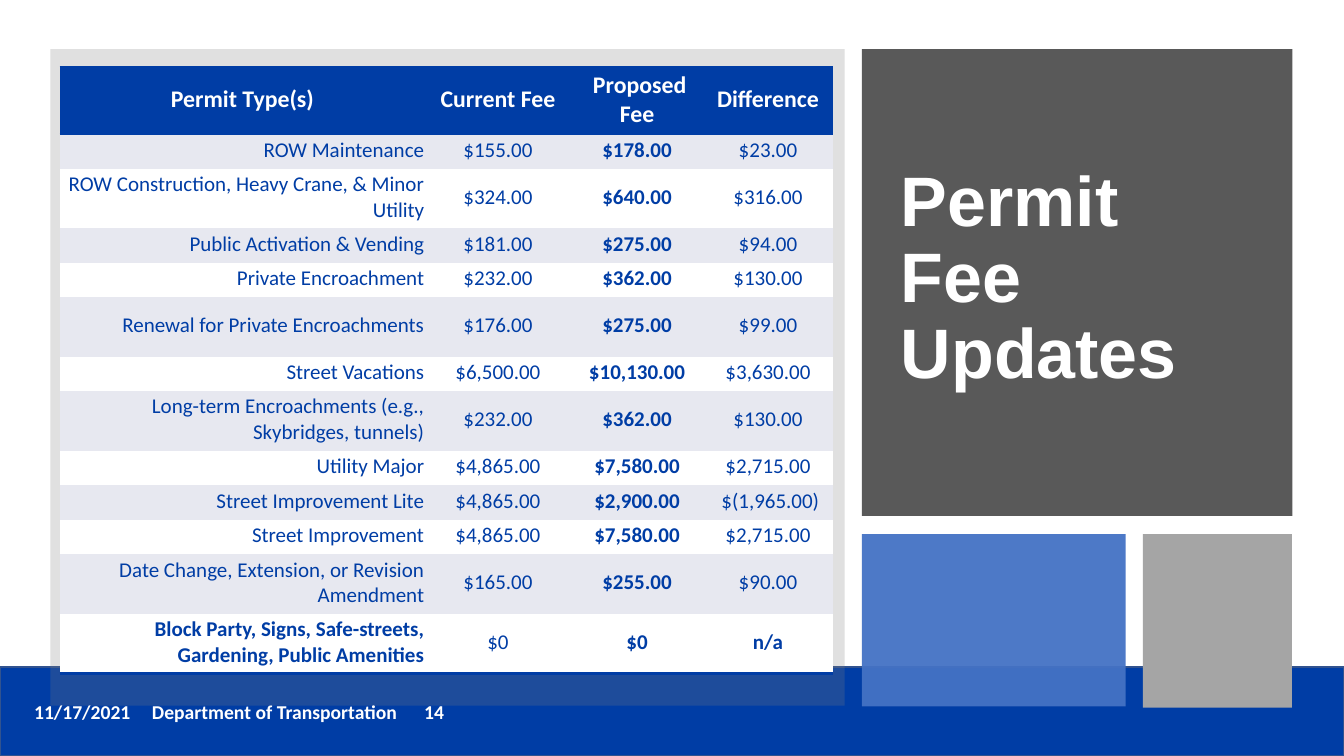
from dataclasses import dataclass

from lxml import etree
from pptx import Presentation
from pptx import util as u
from pptx.dml import color
from pptx.enum import shapes, text
from pptx.oxml import ns


@dataclass(frozen=True)
class Theme:
    blue: str = "003DA5"
    band_line: str = "31538F"
    white: str = "FFFFFF"
    stripe: str = "E7E8F0"
    panel: str = "7F7F7F"
    charcoal: str = "595959"
    accent: str = "4472C4"
    grey: str = "A5A5A5"
    body_font: str = "Calibri"
    title_font: str = "Arial"
    title_size: int = 50
    header_size: int = 17
    body_size: int = 15
    footer_size: int = 14


@dataclass(frozen=True)
class Box:
    left: float
    top: float
    width: float
    height: float

    def lengths(self) -> list[u.Cm]:
        return [u.Cm(n) for n in (self.left, self.top, self.width, self.height)]


@dataclass(frozen=True)
class Block:
    box: Box
    fill: str
    opacity: int = 100
    line: str = ""


@dataclass(frozen=True)
class Permit:
    label: str
    current: str
    proposed: str
    difference: str
    tall: bool = False


THEME = Theme()
NBSP = chr(160)
NO_GRID_STYLE = "{2D5ABB26-0587-4C30-8999-92F81FD0307C}"

BLOCKS = [
    Block(Box(0, 16.81, 33.87, 2.24), THEME.blue, line=THEME.band_line),
    Block(Box(1.27, 1.24, 20.02, 16.54), THEME.panel, opacity=24),
    Block(Box(21.72, 1.24, 10.85, 11.76), THEME.charcoal),
    Block(Box(21.72, 13.46, 6.65, 4.34), THEME.accent, opacity=95),
    Block(Box(28.8, 13.46, 3.76, 4.37), THEME.grey),
]
TITLE_BOX = Box(22.45, 3.1, 9.35, 7.9)
FOOTER_BOX = Box(0.61, 17.5, 25.55, 0.86)
FOOTER_TABS = [2.97, 9.83]

TABLE_LEFT, TABLE_TOP = 1.5, 1.7
COLUMN_WIDTHS = [9.22, 3.66, 3.35, 3.25]
HEADER_HEIGHT, ROW_HEIGHT, TALL_HEIGHT = 1.68, 0.87, 1.5
HEADERS = ["Permit Type(s)", "Current Fee", NBSP + "Proposed Fee", "Difference"]
PERMITS = [
    Permit("ROW Maintenance", "$155.00", "$178.00", "$23.00"),
    Permit("ROW Construction, Heavy Crane, & Minor Utility",
           "$324.00", "$640.00", "$316.00", tall=True),
    Permit("Public Activation & Vending", "$181.00", "$275.00", "$94.00"),
    Permit("Private Encroachment", "$232.00", "$362.00", "$130.00"),
    Permit("Renewal for Private Encroachments",
           "$176.00", "$275.00", "$99.00", tall=True),
    Permit("Street Vacations", "$6,500.00", "$10,130.00", "$3,630.00"),
    Permit("Long-term Encroachments (e.g., Skybridges, tunnels)",
           "$232.00", "$362.00", "$130.00", tall=True),
    Permit("Utility Major", "$4,865.00", "$7,580.00", "$2,715.00"),
    Permit("Street Improvement Lite", "$4,865.00", "$2,900.00", "$(1,965.00)"),
    Permit("Street Improvement", "$4,865.00", "$7,580.00", "$2,715.00"),
    Permit("Date Change, Extension, or Revision Amendment",
           "$165.00", "$255.00", "$90.00", tall=True),
    Permit("Block Party, Signs, Safe-streets, Gardening, Public Amenities",
           "$0", "$0", "n/a", tall=True),
]


def rgb(value: str) -> color.RGBColor:
    return color.RGBColor.from_string(value)


def set_font(paragraph, name: str, size: int, ink: str, bold: bool) -> None:
    font = paragraph.font
    font.name, font.size, font.bold = name, u.Pt(size), bold
    font.color.rgb = rgb(ink)


def add_block(slide, block: Block) -> None:
    shape = slide.shapes.add_shape(shapes.MSO_SHAPE.RECTANGLE, *block.box.lengths())
    shape.shadow.inherit = False
    shape.fill.solid()
    shape.fill.fore_color.rgb = rgb(block.fill)
    if block.opacity < 100:
        fill_color = shape.fill._xPr.find(".//" + ns.qn("a:srgbClr"))
        etree.SubElement(fill_color, ns.qn("a:alpha"), val=str(block.opacity * 1000))
    if block.line:
        shape.line.color.rgb = rgb(block.line)
        shape.line.width = u.Pt(1)
    else:
        shape.line.fill.background()


def add_text(slide, box: Box, words: str):
    frame = slide.shapes.add_textbox(*box.lengths()).text_frame
    frame.word_wrap = True
    frame.text = words
    return frame


def add_title(slide) -> None:
    frame = add_text(slide, TITLE_BOX, "Permit Fee Updates")
    frame.vertical_anchor = text.MSO_ANCHOR.MIDDLE
    paragraph = frame.paragraphs[0]
    paragraph.line_spacing = 0.9
    set_font(paragraph, THEME.title_font, THEME.title_size, THEME.white, True)


def add_footer(slide) -> None:
    frame = add_text(slide, FOOTER_BOX, "11/17/2021\tDepartment of Transportation\t14")
    frame.auto_size = text.MSO_AUTO_SIZE.SHAPE_TO_FIT_TEXT
    paragraph = frame.paragraphs[0]
    tabs = etree.SubElement(paragraph._p.get_or_add_pPr(), ns.qn("a:tabLst"))
    for stop in FOOTER_TABS:
        etree.SubElement(tabs, ns.qn("a:tab"), pos=str(u.Cm(stop)), algn="l")
    set_font(paragraph, THEME.body_font, THEME.footer_size, THEME.white, True)


def add_border(cell, tag: str) -> None:
    border = etree.Element(ns.qn(tag), w=str(u.Pt(2)))
    fill = etree.SubElement(border, ns.qn("a:solidFill"))
    etree.SubElement(fill, ns.qn("a:srgbClr"), val=THEME.blue)
    cell._tc.get_or_add_tcPr().insert(0, border)


def fill_cell(cell, words: str, fill: str, ink: str, size: int, bold: bool,
              align: text.PP_ALIGN) -> None:
    cell.text = words
    cell.vertical_anchor = text.MSO_ANCHOR.MIDDLE
    cell.margin_left = cell.margin_top = cell.margin_right = u.Cm(0.03)
    cell.margin_bottom = u.Cm(0.1)
    cell.fill.solid()
    cell.fill.fore_color.rgb = rgb(fill)
    paragraph = cell.text_frame.paragraphs[0]
    paragraph.alignment = align
    set_font(paragraph, THEME.body_font, size, ink, bold)


def pad_amount(amount: str) -> str:
    """Surround a full amount with hard spaces; a closing bracket takes none."""
    if "." not in amount:
        return amount
    return NBSP + amount + ("" if amount.endswith(")") else NBSP)


def add_fee_table(slide) -> None:
    heights = [HEADER_HEIGHT] + [TALL_HEIGHT if p.tall else ROW_HEIGHT for p in PERMITS]
    box = Box(TABLE_LEFT, TABLE_TOP, sum(COLUMN_WIDTHS), sum(heights))
    table = slide.shapes.add_table(len(heights), len(HEADERS), *box.lengths()).table
    table._tbl.tblPr.find(ns.qn("a:tableStyleId")).text = NO_GRID_STYLE
    for column, width in zip(table.columns, COLUMN_WIDTHS):
        column.width = u.Cm(width)
    for row, height in zip(table.rows, heights):
        row.height = u.Cm(height)

    # Header row
    for cell, header in zip(table.rows[0].cells, HEADERS):
        fill_cell(cell, header, THEME.blue, THEME.white, THEME.header_size, True,
                  text.PP_ALIGN.CENTER)
        add_border(cell, "a:lnB")
        add_border(cell, "a:lnT")

    # Striped permit rows; the last one has a rule below
    for index, permit in enumerate(PERMITS, start=1):
        last = index == len(PERMITS)
        fill = THEME.stripe if index % 2 else THEME.white
        values = [permit.label, *map(pad_amount, (permit.current, permit.proposed,
                                                  permit.difference))]
        for column, value in enumerate(values):
            cell = table.cell(index, column)
            bold = column == 2 or (last and column != 1)
            align = text.PP_ALIGN.CENTER if column else text.PP_ALIGN.RIGHT
            fill_cell(cell, value, fill, THEME.blue, THEME.body_size, bold, align)
            if last:
                add_border(cell, "a:lnB")


def main() -> None:
    presentation = Presentation()
    presentation.slide_width, presentation.slide_height = u.Cm(33.87), u.Cm(19.05)
    slide = presentation.slides.add_slide(presentation.slide_layouts[6])
    # Footer band with its text, then the panels over it
    add_block(slide, BLOCKS[0])
    add_footer(slide)
    for block in BLOCKS[1:]:
        add_block(slide, block)
    add_title(slide)
    add_fee_table(slide)
    presentation.save("out.pptx")


if __name__ == "__main__":
    main()
